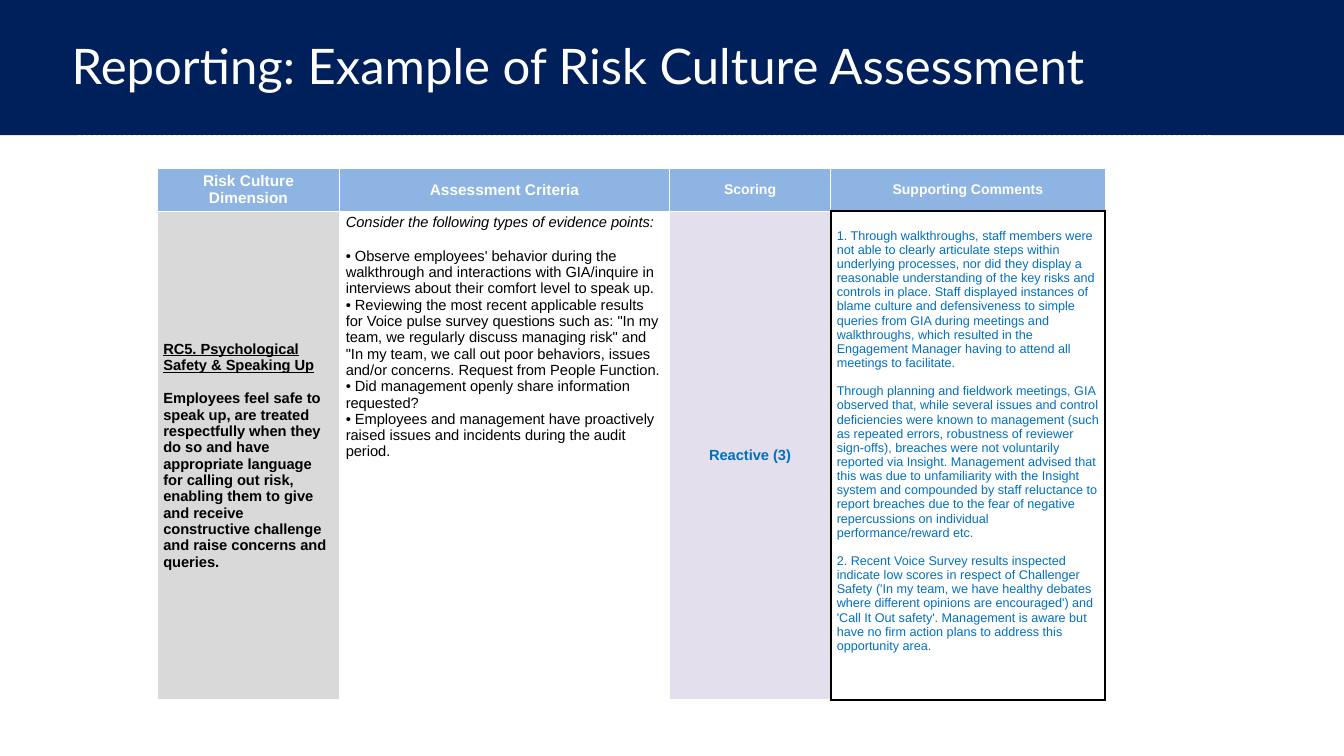
from lxml import etree
from pptx import Presentation
from pptx.dml.color import RGBColor
from pptx.enum.dml import MSO_LINE
from pptx.enum.shapes import MSO_CONNECTOR, MSO_SHAPE
from pptx.enum.text import MSO_ANCHOR, PP_ALIGN
from pptx.oxml.ns import qn
from pptx.util import Inches, Pt

LEFT, CENTER = PP_ALIGN.LEFT, PP_ALIGN.CENTER
TOP, MIDDLE = MSO_ANCHOR.TOP, MSO_ANCHOR.MIDDLE
RECTANGLE, STRAIGHT, DASH = MSO_SHAPE.RECTANGLE, MSO_CONNECTOR.STRAIGHT, MSO_LINE.DASH
SLIDE_WIDTH, SLIDE_HEIGHT = 13.33, 7.5
COLORS = {"navy": "00205B", "white": "FFFFFF", "black": "000000", "header": "8DB4E2",
          "gray": "D9D9D9", "lilac": "E4DFEC", "blue": "0070C0"}
COLUMN_WIDTHS = [1.81, 3.27, 1.6, 2.72]
ROW_HEIGHTS = [0.41, 4.67]
SIDE_MARGIN, END_MARGIN, COMMENTS_BOTTOM = 0.06, 0.03, 0.32
HEADERS = [("Risk Culture Dimension", 11), ("Assessment Criteria", 11),
           ("Scoring", 10), ("Supporting Comments", 10)]

DIMENSION = [
    ("RC5. Psychological Safety & Speaking Up", {"underline": True}, 0),
    ("Employees feel safe to speak up, are treated respectfully when they do so and have "
     "appropriate language for calling out risk, enabling them to give and receive "
     "constructive challenge and raise concerns and queries.", {}, 12.3),
]
CRITERIA = [
    ("Consider the following types of evidence points:", {"italic": True}, 0),
    ("• Observe employees' behavior during the walkthrough and interactions with GIA/inquire "
     "in interviews about their comfort level to speak up.", {}, 12.3),
    ("• Reviewing the most recent applicable results for Voice pulse survey questions such as: "
     "\"In my team, we regularly discuss managing risk\" and \"In my team, we call out poor "
     "behaviors, issues and/or concerns. Request from People Function.", {}, 0),
    ("• Did management openly share information requested?", {}, 0),
    ("• Employees and management have proactively raised issues and incidents during the "
     "audit period.", {}, 0),
]
COMMENTS = [
    ("1. Through walkthroughs, staff members were not able to clearly articulate steps within "
     "underlying processes, nor did they display a reasonable understanding of the key risks "
     "and controls in place. Staff displayed instances of blame culture and defensiveness to "
     "simple queries from GIA during meetings and walkthroughs, which resulted in the "
     "Engagement Manager having to attend all meetings to facilitate.", {}, 0),
    ("Through planning and fieldwork meetings, GIA observed that, while several issues and "
     "control deficiencies were known to management (such as repeated errors, robustness of "
     "reviewer sign-offs), breaches were not voluntarily reported via Insight. Management "
     "advised that this was due to unfamiliarity with the Insight system and compounded by "
     "staff reluctance to report breaches due to the fear of negative repercussions on "
     "individual performance/reward etc.", {}, 10.2),
    ("2. Recent Voice Survey results inspected indicate low scores in respect of Challenger "
     "Safety ('In my team, we have healthy debates where different opinions are encouraged') "
     "and 'Call It Out safety'. Management is aware but have no firm action plans to address "
     "this opportunity area.", {}, 10.2),
]


def rgb(name):
    """Return the named colour."""
    return RGBColor.from_string(COLORS[name])


def write(text_frame, paragraphs, color, alignment=LEFT, **font_format):
    """Write (text, format, space before) entries as paragraphs."""
    for index, (text, extra, space) in enumerate(paragraphs):
        paragraph = text_frame.add_paragraph() if index else text_frame.paragraphs[0]
        paragraph.alignment = alignment
        paragraph.space_before = Pt(space)
        run = paragraph.add_run()
        run.text = text
        run.font.color.rgb = rgb(color)
        for name, value in {**font_format, **extra}.items():
            setattr(run.font, name, value)


def set_borders(cell, dark_sides):
    """Draw thick black lines on the dark sides and thin white ones elsewhere."""
    properties = cell._tc.get_or_add_tcPr()
    for side in "LRTB":
        color, width = ("black", 1.5) if side in dark_sides else ("white", 0.75)
        line = etree.SubElement(properties, qn(f"a:ln{side}"), w=str(Pt(width)))
        fill = etree.SubElement(line, qn("a:solidFill"))
        etree.SubElement(fill, qn("a:srgbClr"), val=COLORS[color])


def style_cell(cell, fill, dark_sides="", anchor=MIDDLE, bottom=END_MARGIN):
    """Set the borders, fill, margins and anchor of a cell."""
    set_borders(cell, dark_sides)
    cell.fill.solid()
    cell.fill.fore_color.rgb = rgb(fill)
    layout = {"margin_left": Inches(SIDE_MARGIN), "margin_right": Inches(SIDE_MARGIN),
              "margin_top": Inches(END_MARGIN), "margin_bottom": Inches(bottom),
              "vertical_anchor": anchor}
    for name, value in layout.items():
        setattr(cell, name, value)


def add_title_band(slide, left, top, width, height):
    """Add the navy band with its dashed rule and title."""
    band = slide.shapes.add_shape(RECTANGLE, *map(Inches, (left, top, width, height)))
    band.shadow.inherit = False
    band.fill.solid()
    band.fill.fore_color.rgb = rgb("navy")
    band.line.fill.background()

    bottom = Inches(top + height)
    rule = slide.shapes.add_connector(STRAIGHT, Inches(left + 0.058 * width), bottom,
                                      Inches(left + 0.902 * width), bottom)
    etree.SubElement(rule._element.spPr, qn("a:effectLst"))
    rule.line.color.rgb = rgb("white")
    rule.line.width = Pt(0.5)
    rule.line.dash_style = DASH

    title = slide.shapes.add_textbox(Inches(left + 0.046 * width), Inches(top + 0.06 * height),
                                     Inches(0.87 * width), Inches(0.9 * height))
    title.text_frame.word_wrap = True
    title.text_frame.vertical_anchor = MIDDLE
    write(title.text_frame, [("Reporting: Example of Risk Culture Assessment", {}, 0)],
          "white", name="Lato", size=Pt(35))
    title.text_frame.paragraphs[0].line_spacing = 0.9


def add_assessment_table(slide, left, top):
    """Add the table with the scored risk culture dimension."""
    frame = slide.shapes.add_table(
        len(ROW_HEIGHTS), len(COLUMN_WIDTHS), Inches(left), Inches(top),
        Inches(sum(COLUMN_WIDTHS)), Inches(sum(ROW_HEIGHTS)))
    table = frame.table
    table.horz_banding = False
    for column, width in zip(table.columns, COLUMN_WIDTHS):
        column.width = Inches(width)
    for row, height in zip(table.rows, ROW_HEIGHTS):
        row.height = Inches(height)

    for index, (text, size) in enumerate(HEADERS):
        cell = table.cell(0, index)
        style_cell(cell, "header", "B" if text == "Supporting Comments" else "")
        write(cell.text_frame, [(text, {}, 0)], "white", CENTER,
              name="Arial", size=Pt(size), bold=True)

    body = [
        (DIMENSION, "black", LEFT, 10.5, True, {"fill": "gray"}),
        (CRITERIA, "black", LEFT, 10.5, False, {"fill": "white", "anchor": TOP}),
        ([("Reactive (3)", {}, 0)], "blue", CENTER, 10.5, True,
         {"fill": "lilac", "dark_sides": "R"}),
        (COMMENTS, "blue", LEFT, 9, False,
         {"fill": "white", "dark_sides": "LRTB", "bottom": COMMENTS_BOTTOM}),
    ]
    for index, (paragraphs, color, alignment, size, bold, style) in enumerate(body):
        cell = table.cell(1, index)
        style_cell(cell, **style)
        write(cell.text_frame, paragraphs, color, alignment,
              name="Arial", size=Pt(size), bold=bold)


def main():
    """Build and save the presentation."""
    presentation = Presentation()
    presentation.slide_width = Inches(SLIDE_WIDTH)
    presentation.slide_height = Inches(SLIDE_HEIGHT)
    slide = presentation.slides.add_slide(presentation.slide_layouts[6])
    add_title_band(slide, 0, 0, SLIDE_WIDTH, 1.34)
    add_assessment_table(slide, 1.56, 1.67)
    presentation.save("out.pptx")


if __name__ == "__main__":
    main()
